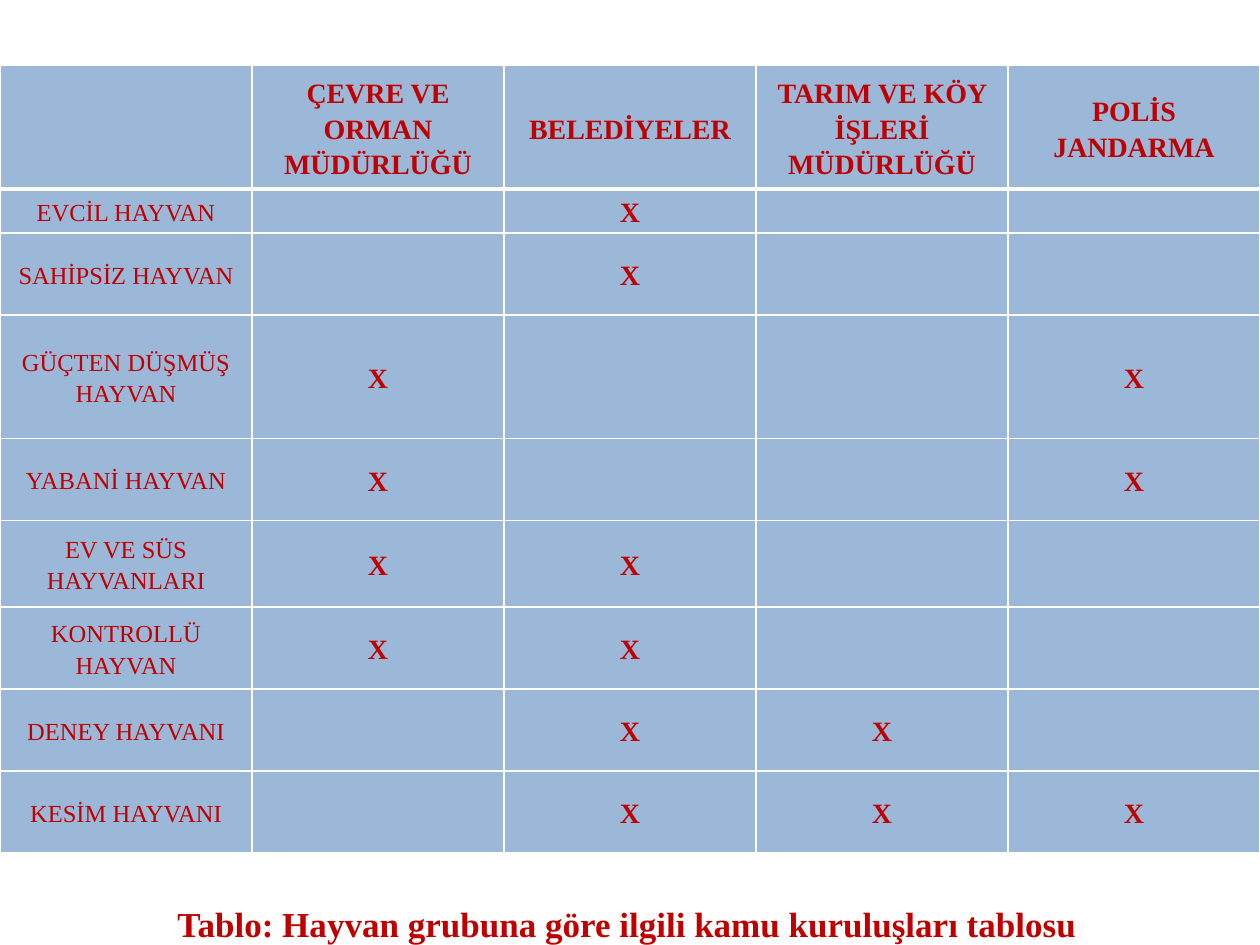
from lxml.etree import SubElement
from pptx import Presentation
from pptx.dml.color import RGBColor
from pptx.enum.text import MSO_ANCHOR as Anchor, MSO_AUTO_SIZE as AutoSize, PP_ALIGN as Align
from pptx.oxml.ns import qn
from pptx.util import Pt

RED = RGBColor(0xC0, 0x00, 0x00)
BLUE = RGBColor(0x4F, 0x81, 0xBD)
WHITE = RGBColor(0xFF, 0xFF, 0xFF)
FONT = "Times New Roman"
BLUE_OPACITY = 56  # percent

COLUMN_WIDTH = 144
ROW_HEIGHTS = [70.5, 25.2, 46.8, 70.5, 46.8, 49.7, 46.8, 46.8, 46.8]
AUTHORITIES = [
    "",
    "ÇEVRE VE ORMAN MÜDÜRLÜĞÜ",
    "BELEDİYELER",
    "TARIM VE KÖY İŞLERİ MÜDÜRLÜĞÜ",
    "POLİS\vJANDARMA",
]
# Animal group and the columns of the authorities in charge
ANIMAL_GROUPS = [
    ("EVCİL HAYVAN", {2}),
    ("SAHİPSİZ HAYVAN", {2}),
    ("GÜÇTEN DÜŞMÜŞ HAYVAN", {1, 4}),
    ("YABANİ HAYVAN", {1, 4}),
    ("EV VE SÜS HAYVANLARI", {1, 2}),
    ("KONTROLLÜ HAYVAN", {1, 2}),
    ("DENEY HAYVANI", {2, 3}),
    ("KESİM HAYVANI", {2, 3, 4}),
]


def format_paragraph(para, size, bold, align):
    para.alignment = align
    para.line_spacing = 1.15
    para.space_after = Pt(10)
    font = para.font
    font.name, font.size, font.bold = FONT, Pt(size), bold
    font.color.rgb = RED


def add_borders(cell, bottom_width):
    properties = cell._tc.get_or_add_tcPr()
    for side, width in (("L", 1), ("R", 1), ("T", 1), ("B", bottom_width)):
        line = SubElement(properties, qn(f"a:ln{side}"), w=str(Pt(width)))
        fill = SubElement(line, qn("a:solidFill"))
        SubElement(fill, qn("a:srgbClr"), val=str(WHITE))


def fill_cell(cell):
    cell.fill.solid()
    cell.fill.fore_color.rgb = BLUE
    color = cell._tc.tcPr.find(qn("a:solidFill")).find(qn("a:srgbClr"))
    SubElement(color, qn("a:alpha"), val=str(BLUE_OPACITY * 1000))


def format_cell(cell, text, size, bold, bottom_width):
    cell.text = text
    cell.vertical_anchor = Anchor.MIDDLE
    cell.margin_left = cell.margin_right = cell.margin_top = cell.margin_bottom = 0
    format_paragraph(cell.text_frame.paragraphs[0], size, bold, Align.CENTER)
    add_borders(cell, bottom_width)
    fill_cell(cell)


def add_authority_table(slide):
    rows = [AUTHORITIES]
    for group, marked in ANIMAL_GROUPS:
        marks = ["X" if column in marked else "" for column in range(1, len(AUTHORITIES))]
        rows.append([group] + marks)

    table = slide.shapes.add_table(
        len(rows), len(AUTHORITIES), 0, Pt(37.5),
        Pt(COLUMN_WIDTH * len(AUTHORITIES)), Pt(sum(ROW_HEIGHTS)),
    ).table
    table.horz_banding = False
    for column in table.columns:
        column.width = Pt(COLUMN_WIDTH)
    for row, height in zip(table.rows, ROW_HEIGHTS):
        row.height = Pt(height)

    for row_index, texts in enumerate(rows):
        is_header = row_index == 0
        for column_index, text in enumerate(texts):
            is_group = column_index == 0 and not is_header
            format_cell(
                table.cell(row_index, column_index), text,
                size=14 if is_group else 16,
                bold=not is_group,
                bottom_width=3 if is_header else 1,
            )


def add_caption(slide, text):
    box = slide.shapes.add_textbox(Pt(94.3), Pt(508.3), Pt(532), Pt(33))
    frame = box.text_frame
    frame.word_wrap = False
    frame.auto_size = AutoSize.SHAPE_TO_FIT_TEXT
    frame.text = text
    format_paragraph(frame.paragraphs[0], 20, True, Align.JUSTIFY)


def main():
    deck = Presentation()
    deck.slide_width, deck.slide_height = Pt(720), Pt(540)
    slide = deck.slides.add_slide(deck.slide_layouts[6])  # blank layout

    # Who is responsible for which animals
    add_authority_table(slide)

    # Caption below the table
    add_caption(slide, "Tablo: Hayvan grubuna göre ilgili kamu kuruluşları tablosu")

    deck.save("out.pptx")


if __name__ == "__main__":
    main()
